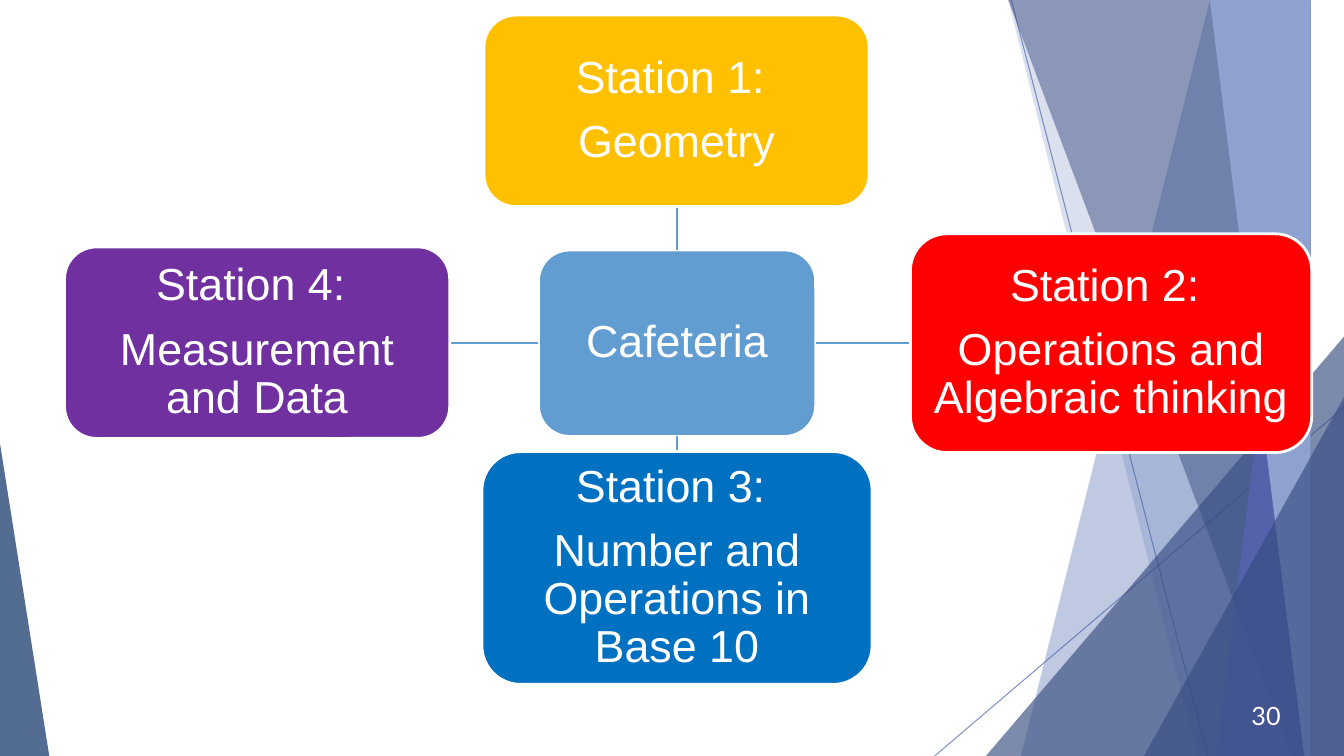
from dataclasses import dataclass

from lxml.etree import SubElement
from pptx import Presentation
from pptx.dml.color import RGBColor
from pptx.enum.shapes import MSO_CONNECTOR, MSO_SHAPE
from pptx.enum.text import MSO_ANCHOR, PP_ALIGN
from pptx.oxml.ns import qn
from pptx.util import Inches, Pt


@dataclass(frozen=True)
class Theme:
    white: str = "FFFFFF"
    accent: str = "4A66AC"
    navy: str = "374C81"
    midnight: str = "072B62"
    violet: str = "5963B8"
    periwinkle: str = "8FA1CF"
    hub: str = "629DD1"
    gold: str = "FFC000"
    red: str = "FF0000"
    blue: str = "0070C0"
    purple: str = "7030A0"
    body_font: str = "Arial"
    number_font: str = "Lato"
    body_size: float = 32
    number_size: float = 18
    paragraph_gap: float = 11.2


@dataclass(frozen=True)
class Ray:
    start: tuple[float, float]
    end: tuple[float, float]


@dataclass(frozen=True)
class Facet:
    points: tuple[tuple[float, float], ...]
    color: str
    opacity: int = 100


@dataclass(frozen=True)
class Wedge:
    left: float
    top: float
    width: float
    height: float
    apex: float
    color: str
    opacity: int


@dataclass(frozen=True)
class Box:
    left: float
    top: float
    width: float
    height: float
    color: str
    lines: tuple[str, ...]

    @property
    def middle_x(self) -> float:
        return self.left + self.width / 2

    @property
    def middle_y(self) -> float:
        return self.top + self.height / 2


THEME = Theme()
WIDTH, HEIGHT, BLEED = 13.33, 7.5, 7.51

RAYS = (Ray((10.03, 0), (11.98, HEIGHT)), Ray((WIDTH, 4.04), (9.27, HEIGHT)))


def edge_facet(top_x: float, bottom_x: float, color: str, opacity: int = 100) -> Facet:
    corners = ((top_x, 0), (WIDTH, 0), (WIDTH, BLEED), (bottom_x, BLEED))
    return Facet(corners, color, opacity)


DECORATION = (
    edge_facet(12.28, 10.04, THEME.accent, 35),
    edge_facet(10.5, 11.83, THEME.accent, 20),
    Wedge(9.77, 3.34, 3.56, 4.17, 1, THEME.navy, 65),
    edge_facet(10.05, 12.89, THEME.navy, 49),
    edge_facet(13.03, 11.92, THEME.violet, 69),
    edge_facet(11.96, 13.18, THEME.periwinkle),
    Wedge(11.34, 3.94, 1.99, 3.57, 1, THEME.navy, 65),
    Wedge(0, 4.4, 0.49, 3.11, 0, THEME.midnight, 69),
)

HUB = Box(5.34, 2.48, 2.75, 1.85, THEME.hub, ("Cafeteria",))
STATIONS = (
    Box(4.8, 0.15, 3.82, 1.9, THEME.gold, ("Station 1: ", "Geometry")),
    Box(9.03, 2.32, 3.98, 2.17, THEME.red,
        ("Station 2: ", "Operations and Algebraic thinking")),
    Box(4.78, 4.48, 3.87, 2.31, THEME.blue,
        ("Station 3: ", "Number and Operations in Base 10")),
    Box(0.64, 2.45, 3.82, 1.9, THEME.purple,
        ("Station 4: ", "Measurement and Data")),
)


def rgb(color: str) -> RGBColor:
    return RGBColor.from_string(color)


def set_opacity(s, percent: int) -> None:
    if percent < 100:
        color = s.element.xpath("./p:spPr//a:srgbClr")[-1]
        SubElement(color, qn("a:alpha")).set("val", str(percent * 1000))


def paint(s, color: str, opacity: int) -> None:
    s.shadow.inherit = False
    s.line.fill.background()
    s.fill.solid()
    s.fill.fore_color.rgb = rgb(color)
    set_opacity(s, opacity)


def draw_line(slide, ray: Ray, color: str, width: float, opacity: int = 100) -> None:
    ends = [Inches(v) for v in ray.start + ray.end]
    s = slide.shapes.add_connector(MSO_CONNECTOR.STRAIGHT, *ends)
    s.line.color.rgb = rgb(color)
    s.line.width = Pt(width)
    set_opacity(s, opacity)
    SubElement(s.element.spPr, qn("a:effectLst"))


def draw_facet(slide, facet: Facet) -> None:
    builder = slide.shapes.build_freeform(*facet.points[0], scale=Inches(1))
    builder.add_line_segments(facet.points[1:], close=True)
    paint(builder.convert_to_shape(), facet.color, facet.opacity)


def draw_wedge(slide, wedge: Wedge) -> None:
    frame = [Inches(v) for v in (wedge.left, wedge.top, wedge.width, wedge.height)]
    s = slide.shapes.add_shape(MSO_SHAPE.ISOSCELES_TRIANGLE, *frame)
    s.adjustments[0] = wedge.apex
    paint(s, wedge.color, wedge.opacity)


def draw_box(slide, box: Box) -> None:
    frame = [Inches(v) for v in (box.left, box.top, box.width, box.height)]
    s = slide.shapes.add_shape(MSO_SHAPE.ROUNDED_RECTANGLE, *frame)
    paint(s, box.color, 100)
    s.line.color.rgb = rgb(THEME.white)
    s.line.width = Pt(2)
    tf = s.text_frame
    tf.word_wrap = True
    tf.vertical_anchor = MSO_ANCHOR.MIDDLE
    tf.margin_left = tf.margin_right = tf.margin_top = tf.margin_bottom = Inches(0.09)
    for i, text in enumerate(box.lines):
        p = tf.add_paragraph() if i else tf.paragraphs[0]
        p.text = text
        p.alignment = PP_ALIGN.CENTER
        p.line_spacing = 0.9
        if i:
            p.space_before = Pt(THEME.paragraph_gap)
        style(p, THEME.body_font, THEME.body_size)


def style(p, font: str, size: float) -> None:
    p.font.name = font
    p.font.size = Pt(size)
    p.font.color.rgb = rgb(THEME.white)


def spoke(hub: Box, station: Box) -> Ray:
    x, y = hub.middle_x, hub.middle_y
    if station.top + station.height < hub.top:
        return Ray((x, hub.top), (x, station.top + station.height))
    if station.top > hub.top + hub.height:
        return Ray((x, hub.top + hub.height), (x, station.top))
    if station.left > x:
        return Ray((hub.left + hub.width, y), (station.left, y))
    return Ray((hub.left, y), (station.left + station.width, y))


def draw_number(slide, text: str) -> None:
    s = slide.shapes.add_textbox(Inches(12.05), Inches(6.9), Inches(0.75), Inches(0.4))
    s.text_frame.word_wrap = True
    p = s.text_frame.paragraphs[0]
    p.text = text
    p.alignment = PP_ALIGN.RIGHT
    style(p, THEME.number_font, THEME.number_size)


def main() -> None:
    prs = Presentation()
    prs.slide_width, prs.slide_height = Inches(WIDTH), Inches(HEIGHT)
    slide = prs.slides.add_slide(prs.slide_layouts[6])
    for ray in RAYS:
        draw_line(slide, ray, THEME.accent, 0.75, 69)
    for part in DECORATION:
        if isinstance(part, Facet):
            draw_facet(slide, part)
        else:
            draw_wedge(slide, part)
    draw_number(slide, "30")
    draw_box(slide, HUB)
    for station in STATIONS:
        draw_line(slide, spoke(HUB, station), THEME.hub, 1.25)
        draw_box(slide, station)
    prs.save("out.pptx")


if __name__ == "__main__":
    main()
